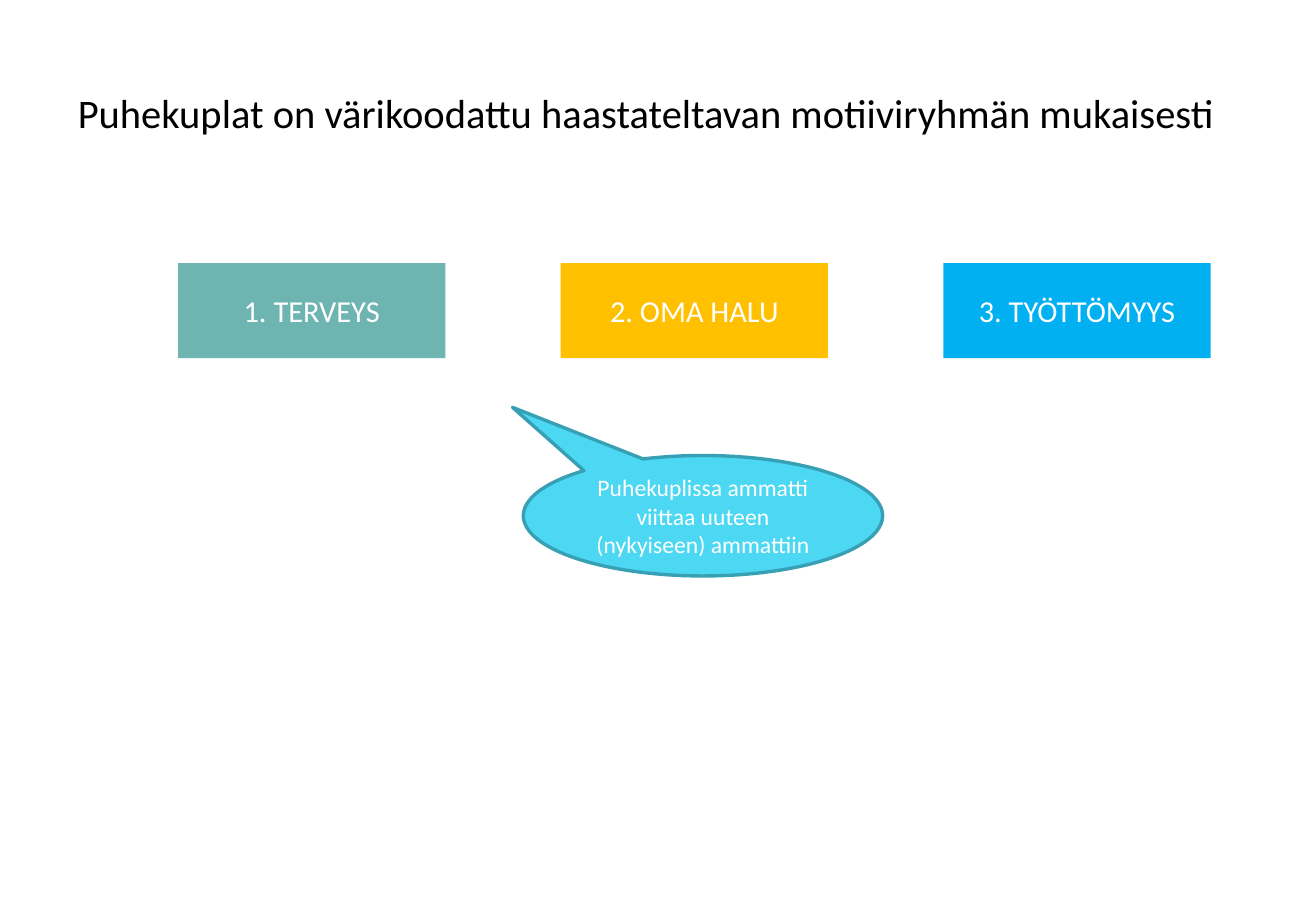
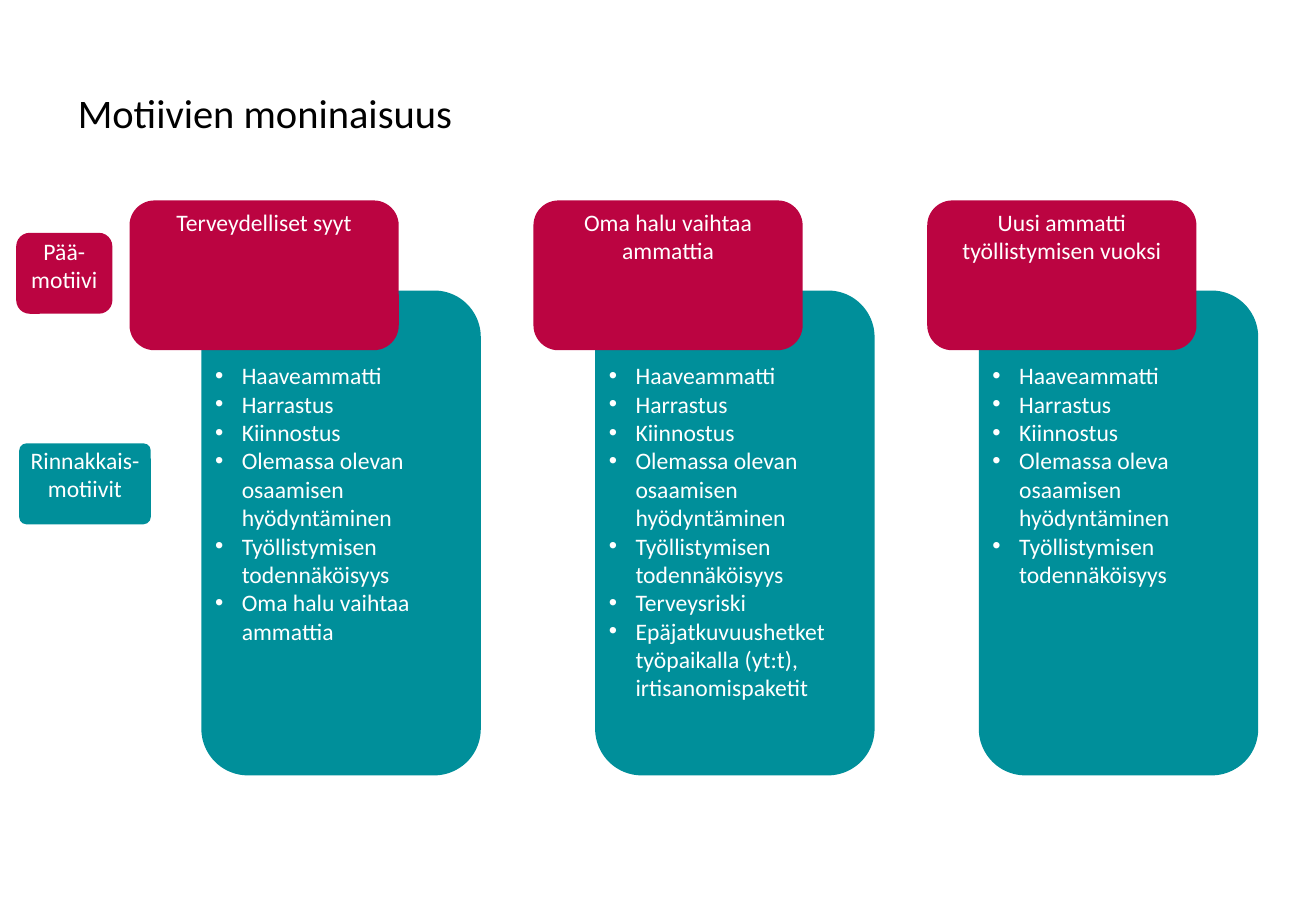
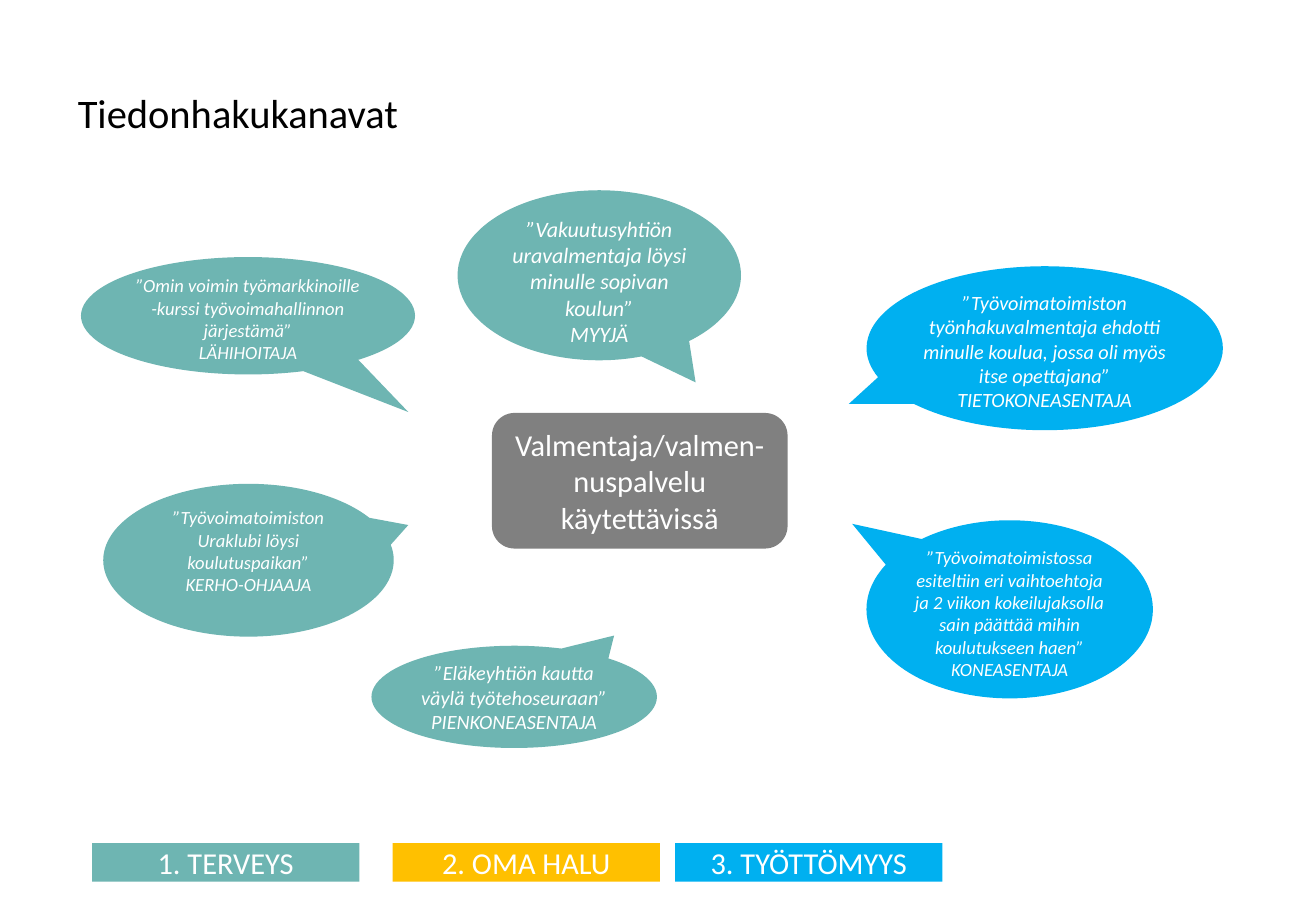
from copy import deepcopy

from lxml.etree import SubElement
from pptx import Presentation
from pptx.dml.color import RGBColor
from pptx.enum.shapes import MSO_SHAPE
from pptx.enum.text import MSO_ANCHOR, PP_ALIGN
from pptx.oxml.ns import qn
from pptx.util import Inches, Pt

# Grid of 130 columns by 90 rows, twelve to the inch
COLUMNS, ROWS, PER_INCH = 130, 90, 12
FONT = "Calibri"
BLACK, WHITE, GREY = "000000", "FFFFFF", "808080"
HEALTH, OWN_WISH, UNEMPLOYED = "6EB5B2", "FFC000", "00B0F0"
MAIN_MOTIVE, PARALLEL_MOTIVE = "BB0441", "008F9A"
BUBBLE, BUBBLE_LINE = "4CD8F3", "38A0B4"
TITLE_BOX = (6.5, 3.6, 117, 15)
GROUPS = [("1. TERVEYS", HEALTH), ("2. OMA HALU", OWN_WISH), ("3. TYÖTTÖMYYS", UNEMPLOYED)]
GROUP_WIDTH = 26.4
NO_INSET = (0, 0, 0, 0)


def cells(count):
    return Inches(count / PER_INCH)


def colour(value):
    return RGBColor.from_string(value)


def add_bullet(paragraph, indent=0.22):
    properties = paragraph._p.get_or_add_pPr()
    properties.set("marL", str(Inches(indent)))
    properties.set("indent", str(-Inches(indent)))
    SubElement(properties, qn("a:buFont")).set("typeface", "Arial")
    SubElement(properties, qn("a:buChar")).set("char", "•")


def write_text(shape, lines, size=14, color=WHITE, italic=False, bullets=False,
               align=PP_ALIGN.CENTER, anchor=MSO_ANCHOR.MIDDLE, insets=None):
    frame = shape.text_frame
    frame.word_wrap = True
    frame.vertical_anchor = anchor
    if insets:
        (frame.margin_left, frame.margin_top,
         frame.margin_right, frame.margin_bottom) = map(Inches, insets)
    for index, line in enumerate(lines):
        paragraph = frame.add_paragraph() if index else frame.paragraphs[0]
        paragraph.text = line
        paragraph.alignment = align
        if bullets:
            add_bullet(paragraph)
        for run in paragraph.runs:
            run.font.name = FONT
            run.font.size = Pt(size)
            run.font.italic = italic
            run.font.color.rgb = colour(color)
        # A line break takes the size of the text around it
        for line_break in paragraph._p.findall(qn("a:br")):
            line_break.append(deepcopy(paragraph.runs[0]._r.rPr))


def add_block(slide, kind, box, fill, lines, line=None, adjustments=(), **text_format):
    shape = slide.shapes.add_shape(kind, *map(cells, box))
    shape.shadow.inherit = False
    shape.fill.solid()
    shape.fill.fore_color.rgb = colour(fill)
    if line:
        shape.line.color.rgb = colour(line)
        shape.line.width = Pt(2)
    else:
        shape.line.fill.background()
    for index, value in enumerate(adjustments):
        shape.adjustments[index] = value
    write_text(shape, lines, **text_format)


def add_titled_slide(presentation, title):
    slide = presentation.slides.add_slide(presentation.slide_layouts[6])
    title_shape = slide.shapes.add_textbox(*map(cells, TITLE_BOX))
    write_text(title_shape, [title], size=24, color=BLACK, align=PP_ALIGN.LEFT)
    return slide


def add_group_legend(slide, lefts, top, height):
    for left, (name, fill) in zip(lefts, GROUPS):
        add_block(slide, MSO_SHAPE.RECTANGLE, (left, top, GROUP_WIDTH, height),
                  fill, [name], size=18)


def add_quote(slide, box, tip, fill, size, quote, occupation):
    add_block(slide, MSO_SHAPE.OVAL_CALLOUT, box, fill, [quote, occupation],
              adjustments=tip, size=size, italic=True,
              anchor=MSO_ANCHOR.TOP, insets=NO_INSET)


def add_motive_label(slide, box, fill, text, adjustments=()):
    add_block(slide, MSO_SHAPE.ROUNDED_RECTANGLE, box, fill, [text],
              adjustments=adjustments, anchor=MSO_ANCHOR.TOP, insets=NO_INSET)


def add_motive_column(slide, box, shift, heading, motives):
    left, top, width, height = box
    drop = 8.9
    # List panel, set lower and to the right of its heading
    add_block(slide, MSO_SHAPE.ROUNDED_RECTANGLE,
              (left + shift, top + drop, width + 1, height - drop),
              PARALLEL_MOTIVE, motives, bullets=True, align=PP_ALIGN.LEFT,
              anchor=MSO_ANCHOR.TOP, insets=(0, 0.47, 0, 0))
    add_motive_label(slide, (left, top, width, 14.8), MAIN_MOTIVE, heading)


def build_colour_key(presentation):
    slide = add_titled_slide(
        presentation, "Puhekuplat on värikoodattu haastateltavan motiiviryhmän mukaisesti")
    step = GROUP_WIDTH + 11.4
    add_group_legend(slide, [17.6 + step * index for index in range(3)], 26, 9.4)
    add_block(slide, MSO_SHAPE.OVAL_CALLOUT, (51.7, 45, 35.5, 11.9), BUBBLE,
              ["Puhekuplissa ammatti viittaa uuteen (nykyiseen) ammattiin"],
              line=BUBBLE_LINE, adjustments=(-0.53, -0.9))


def build_motives(presentation):
    slide = add_titled_slide(presentation, "Motiivien moninaisuus")
    dreams = ["Haaveammatti", "Harrastus", "Kiinnostus"]
    skills = "Olemassa olevan osaamisen hyödyntäminen"
    employment = "Työllistymisen todennäköisyys"
    columns = [
        (12.8, "Terveydelliset syyt",
         dreams + [skills, employment, "Oma halu vaihtaa ammattia"]),
        (52.7, "Oma halu vaihtaa ammattia",
         dreams + [skills, employment, "Terveysriski",
                   "Epäjatkuvuushetket työpaikalla (yt:t), irtisanomispaketit"]),
        (91.6, "Uusi ammatti työllistymisen vuoksi",
         dreams + ["Olemassa oleva osaamisen hyödyntäminen", employment]),
    ]
    for index, (left, heading, motives) in enumerate(columns):
        add_motive_column(slide, (left, 19.8, 26.6, 56.8), 7.1 - index, heading, motives)
    # Row labels
    add_motive_label(slide, (1.6, 23, 9.5, 8), MAIN_MOTIVE, "Pää-motiivi")
    add_motive_label(slide, (1.9, 43.8, 13, 8), PARALLEL_MOTIVE,
                     "Rinnakkais-motiivit", adjustments=(0.09,))


def build_channels(presentation):
    slide = add_titled_slide(presentation, "Tiedonhakukanavat")
    quotes = [
        ((10.2, 47.8, 28.7, 15.1), (0.55, -0.23), HEALTH, 11,
         "”Työvoimatoimiston Uraklubi löysi koulutuspaikan”", "KERHO-OHJAAJA"),
        ((8, 25.4, 33, 11.6), (0.48, 0.82), HEALTH, 11,
         "”Omin voimin työmarkkinoille\n-kurssi työvoimahallinnon järjestämä”",
         "LÄHIHOITAJA"),
        ((45.2, 18.8, 28, 16.8), (0.34, 0.63), HEALTH, 13,
         "”Vakuutusyhtiön uravalmentaja löysi minulle sopivan koulun”", "MYYJÄ"),
        ((36.7, 63.8, 28.2, 10.1), (0.35, -0.6), HEALTH, 12,
         "”Eläkeyhtiön kautta väylä työtehoseuraan”", "PIENKONEASENTAJA"),
        ((85.6, 26.3, 35.2, 16.2), (-0.55, 0.34), UNEMPLOYED, 12,
         "”Työvoimatoimiston työnhakuvalmentaja ehdotti minulle koulua, "
         "jossa oli myös itse opettajana”", "TIETOKONEASENTAJA"),
        ((85.6, 51.4, 28.3, 17.6), (-0.55, -0.48), UNEMPLOYED, 11,
         "”Työvoimatoimistossa esiteltiin eri vaihtoehtoja ja 2 viikon kokeilujaksolla "
         "sain päättää mihin koulutukseen haen”", "KONEASENTAJA"),
    ]
    for quote in quotes:
        add_quote(slide, *quote)
    # Shared theme in the middle
    add_block(slide, MSO_SHAPE.ROUNDED_RECTANGLE, (48.6, 40.8, 29.2, 13.4), GREY,
              ["Valmentaja/valmen-nuspalvelu käytettävissä"], size=18)
    add_group_legend(slide, (9.1, 38.8, 66.7), 83.3, 3.8)


def main():
    presentation = Presentation()
    presentation.slide_width = cells(COLUMNS)
    presentation.slide_height = cells(ROWS)
    build_colour_key(presentation)
    build_motives(presentation)
    build_channels(presentation)
    presentation.save("out.pptx")


if __name__ == "__main__":
    main()
